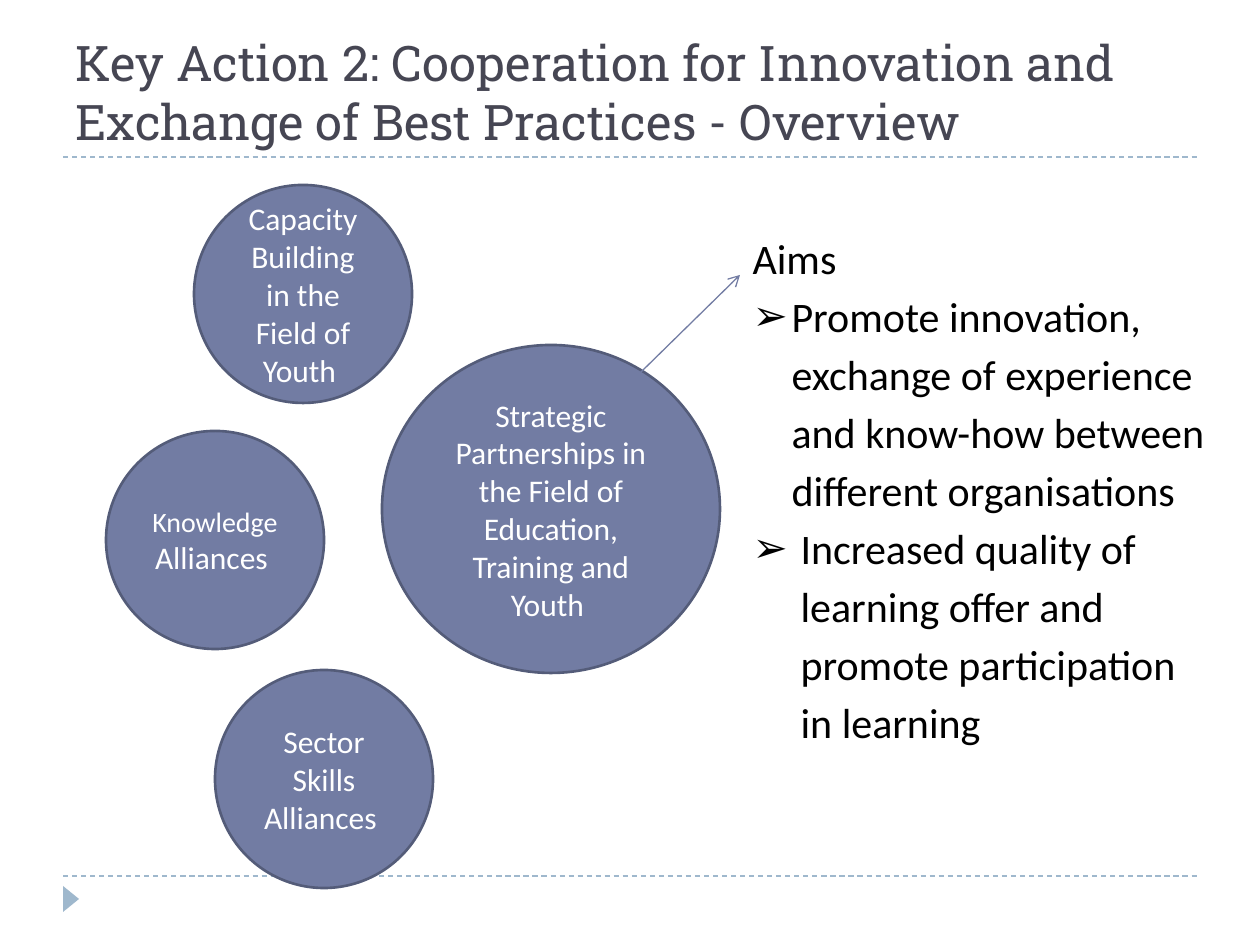
from lxml import etree
from pptx import Presentation
from pptx.dml.color import RGBColor
from pptx.enum.dml import MSO_LINE
from pptx.enum.shapes import MSO_CONNECTOR, MSO_SHAPE
from pptx.enum.text import MSO_ANCHOR, MSO_AUTO_SIZE, PP_ALIGN
from pptx.oxml.ns import qn
from pptx.util import Pt

STRAIGHT = MSO_CONNECTOR.STRAIGHT
ELLIPSE, TRIANGLE = MSO_SHAPE.OVAL, MSO_SHAPE.ISOSCELES_TRIANGLE
DASH = MSO_LINE.DASH
LEFT, CENTER = PP_ALIGN.LEFT, PP_ALIGN.CENTER
MIDDLE, BOTTOM, TOP = MSO_ANCHOR.MIDDLE, MSO_ANCHOR.BOTTOM, MSO_ANCHOR.TOP
FIT_NONE = MSO_AUTO_SIZE.NONE

EMU_PER_PX = 914400 / 126
COLORS = {
    "title": "464653",
    "body": "000000",
    "circle": "727CA3",
    "circle_edge": "545C79",
    "circle_text": "FFFFFF",
    "rule": "9FB8CD",
}
HEADING_FONT, BODY_FONT = "Roboto Slab", "Calibri"

TITLE = ("Key Action 2: Cooperation for Innovation and "
         "Exchange of Best Practices - Overview")
SMALL = 218
CIRCLES = [
    (215, 670, SMALL, SMALL, [("Sector Skills Alliances ", 18)]),
    (106, 431, SMALL, SMALL, [("Knowledge ", 16), ("Alliances ", 18)]),
    (194, 185, SMALL, SMALL, [("Capacity Building in the Field of Youth ", 18)]),
    (382, 345, 338, 328, [("Strategic Partnerships in the Field of Education, "
                           "Training and Youth ", 18)]),
]
AIMS = [
    ("Aims", 0),
    ("Promote innovation, exchange of experience and know-how between "
     "different organisations", 39),
    ("Increased quality of learning offer and promote participation\v"
     "in learning", 48),
]


def px(length):
    return round(length * EMU_PER_PX)


def color(name):
    return RGBColor.from_string(COLORS[name])


def format_run(run, size, font, color_name):
    run.font.size = Pt(size)
    run.font.name = font
    run.font.color.rgb = color(color_name)


def place(element, left, top, width, height):
    element.left, element.top = px(left), px(top)
    element.width, element.height = px(width), px(height)


def add_line(slide, start, end, color_name):
    line = slide.shapes.add_connector(STRAIGHT, *map(px, start + end))
    line.line.color.rgb = color(color_name)
    line.line.width = Pt(0.75)
    etree.SubElement(line._element.spPr, qn("a:effectLst"))
    return line


def add_rule(slide, y):
    add_line(slide, (63, y), (1197, y), "rule").line.dash_style = DASH


def add_arrow(slide, start, end):
    arrow = add_line(slide, start, end, "circle")
    etree.SubElement(arrow.line._get_or_add_ln(), qn("a:tailEnd"), type="arrow")


def add_marker(slide):
    marker = slide.shapes.add_shape(TRIANGLE, *map(px, (58, 891, 26, 16)))
    marker.rotation = 90
    marker.shadow.inherit = False
    marker.fill.solid()
    marker.fill.fore_color.rgb = color("rule")
    marker.line.fill.background()


def add_circle(slide, left, top, width, height, label):
    circle = slide.shapes.add_shape(ELLIPSE, *map(px, (left, top, width, height)))
    circle.shadow.inherit = False
    circle.fill.solid()
    circle.fill.fore_color.rgb = color("circle")
    circle.line.color.rgb = color("circle_edge")
    circle.line.width = Pt(1.5)
    circle.text_frame.word_wrap = True
    circle.text_frame.vertical_anchor = MIDDLE
    paragraph = circle.text_frame.paragraphs[0]
    paragraph.alignment = CENTER
    for words, size in label:
        run = paragraph.add_run()
        run.text = words
        format_run(run, size, BODY_FONT, "circle_text")


def fill_title(title):
    place(title, 63, 21, 1134, 136)
    frame = title.text_frame
    frame.text = TITLE
    frame.vertical_anchor = BOTTOM
    frame.auto_size = FIT_NONE
    paragraph = frame.paragraphs[0]
    paragraph.alignment = LEFT
    format_run(paragraph.runs[0], 28, HEADING_FONT, "title")


def set_bullet(paragraph, indent):
    properties = paragraph._p.get_or_add_pPr()
    properties.set("marL", str(px(indent)))
    properties.set("indent", str(-px(indent)))
    if indent:
        etree.SubElement(properties, qn("a:buChar"), char="➢")
    else:
        etree.SubElement(properties, qn("a:buNone"))


def fill_aims(body):
    place(body, 740, 219, 507, 573)
    frame = body.text_frame
    frame.vertical_anchor = TOP
    frame.auto_size = FIT_NONE
    for index, (words, indent) in enumerate(AIMS):
        paragraph = frame.add_paragraph() if index else frame.paragraphs[0]
        paragraph.text = words
        paragraph.line_spacing = 1.15
        paragraph.space_before = Pt(0)
        set_bullet(paragraph, indent)
        for run in paragraph.runs:
            format_run(run, 24, BODY_FONT, "body")


def main():
    deck = Presentation()
    deck.slide_width, deck.slide_height = px(1260), px(945)
    slide = deck.slides.add_slide(deck.slide_layouts[1])
    for y in (876, 157):
        add_rule(slide, y)
    add_marker(slide)
    fill_title(slide.shapes.title)
    for circle in CIRCLES:
        add_circle(slide, *circle)
    fill_aims(slide.placeholders[1])
    add_arrow(slide, (640, 373), (740, 275))
    deck.save("out.pptx")


if __name__ == "__main__":
    main()
